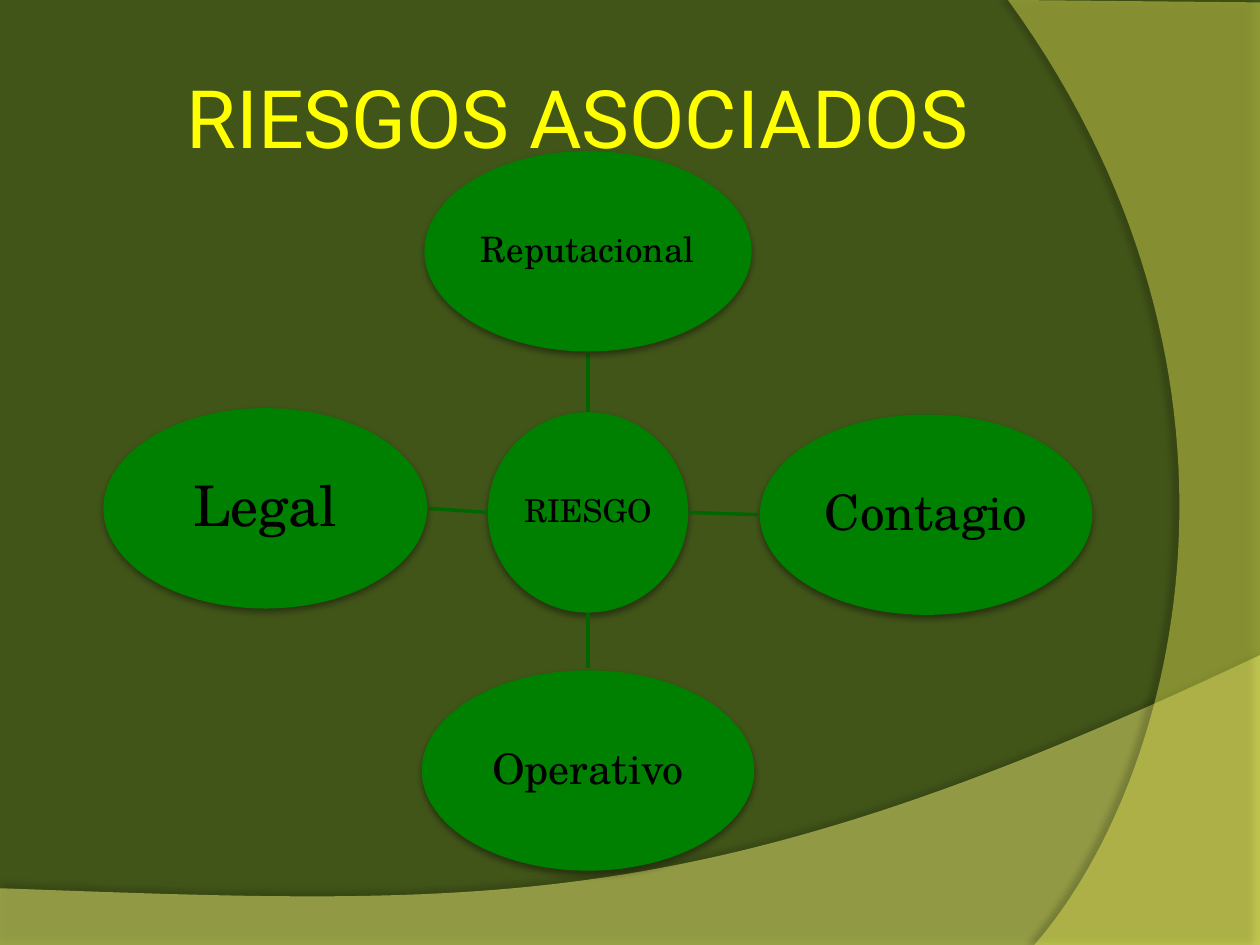
import pptx
import pptx.util
import pptx.oxml.ns
import pptx.dml.color
import pptx.enum.shapes
import pptx.enum.text
from lxml import etree

Pt = pptx.util.Pt
qn = pptx.oxml.ns.qn

TITLE = "RIESGOS ASOCIADOS"
HUB = ("RIESGO", 336, 292.8, 114.5, 18)
RISKS = [
    ("Reputacional", 336, 143.6, 187, 20),
    ("Contagio", 529.2, 294.1, 190, 28),
    ("Operativo", 336, 440.3, 190, 24),
    ("Legal", 151.6, 290.5, 185, 32),
]
HEIGHT = 114.5
GAP = 1.2
WAVES = [
    dict(before=[(0, 540.5), (720, 540.5)],
         curve=[(720, 374.4), (402.5, 524.9), (281.5, 517.7), (0, 507.6)],
         color="FFFF7F", alpha=45, shadow=(35, 4, 3.5, 270)),
    dict(before=[(720, 1.4), (720, 540)],
         curve=[(591.1, 540), (673.2, 445.7), (733, 216), (576, 0)],
         color="FFFF5E", alpha=40, shadow=(45, 4, 4, 180)),
]


def rgb(value):
    return pptx.dml.color.RGBColor.from_string(value)


def add_alpha(parent, percent):
    color = next(parent.iter(qn("a:srgbClr")))
    etree.SubElement(color, qn("a:alpha"), val=str(percent * 1000))


def set_shadow(sp, alpha, blur, dist, angle):
    sp.shadow.inherit = False
    effects = sp._element.spPr.find(qn("a:effectLst"))
    outer = etree.SubElement(effects, qn("a:outerShdw"), blurRad=str(Pt(blur)),
                             dist=str(Pt(dist)), dir=str(angle * 60000),
                             rotWithShape="0")
    etree.SubElement(outer, qn("a:srgbClr"), val="000000")
    add_alpha(outer, alpha)


def write(sp, text, size, font, color, spacing=None, wrap=False):
    tf = sp.text_frame
    tf.word_wrap = wrap
    tf.vertical_anchor = pptx.enum.text.MSO_ANCHOR.MIDDLE
    tf.margin_left = tf.margin_right = tf.margin_top = tf.margin_bottom = Pt(3.6 if wrap else 1)
    p = tf.paragraphs[0]
    p.alignment = pptx.enum.text.PP_ALIGN.CENTER
    p.line_spacing = spacing
    r = p.add_run()
    r.text = text
    r.font.size = Pt(size)
    r.font.name = font
    r.font.color.rgb = rgb(color)


def bezier(points, steps=60):
    for i in range(steps + 1):
        t = i / steps
        weights = ((1 - t) ** 3, 3 * t * (1 - t) ** 2, 3 * t * t * (1 - t), t ** 3)
        yield tuple(sum(w * pt[k] for w, pt in zip(weights, points)) for k in (0, 1))


def add_wave(slide, before, curve, color, alpha, shadow):
    outline = [(Pt(x), Pt(y)) for x, y in before + list(bezier(curve))]
    builder = slide.shapes.build_freeform(*outline[0], scale=1.0)
    builder.add_line_segments(outline[1:], close=True)
    sp = builder.convert_to_shape()
    sp.fill.solid()
    sp.fill.fore_color.rgb = rgb(color)
    add_alpha(sp._element.spPr.find(qn("a:solidFill")), alpha)
    sp.line.fill.background()
    set_shadow(sp, *shadow)


def add_ellipse(slide, text, x, y, width, size):
    sp = slide.shapes.add_shape(pptx.enum.shapes.MSO_SHAPE.OVAL, Pt(x - width / 2),
                                Pt(y - HEIGHT / 2), Pt(width), Pt(HEIGHT))
    sp.fill.solid()
    sp.fill.fore_color.rgb = rgb("008000")
    sp.line.fill.background()
    set_shadow(sp, 40, 4, 2, 90)
    write(sp, text, size, "TeX Gyre Schola", "000000", spacing=0.9)


def add_spoke(slide, x, y, width):
    _, hub_x, hub_y, hub_width, _ = HUB
    dx, dy = x - hub_x, y - hub_y
    if abs(dx) > abs(dy):
        side = 1 if dx > 0 else -1
        start = hub_x + side * hub_width / 2, hub_y
        end = x - side * (width / 2 + GAP), y
    else:
        side = 1 if dy > 0 else -1
        start = hub_x, hub_y + side * HEIGHT / 2
        end = x, y - side * (HEIGHT / 2 + GAP)
    line = slide.shapes.add_connector(pptx.enum.shapes.MSO_CONNECTOR.STRAIGHT,
                                      *(Pt(v) for v in start + end))
    line.line.color.rgb = rgb("006700")
    line.line.width = Pt(2)
    etree.SubElement(line._element.spPr, qn("a:effectLst"))


def main():
    prs = pptx.Presentation()
    prs.slide_width, prs.slide_height = Pt(720), Pt(540)
    slide = prs.slides.add_slide(prs.slide_layouts[5])
    slide.background.fill.solid()
    slide.background.fill.fore_color.rgb = rgb("425519")
    for wave in WAVES:
        add_wave(slide, **wave)
    add_ellipse(slide, *HUB)
    for risk in RISKS:
        add_spoke(slide, *risk[1:4])
        add_ellipse(slide, *risk)
    title = slide.shapes.title
    title.left, title.top, title.width, title.height = Pt(36), Pt(21.6), Pt(588), Pt(90)
    write(title, TITLE, 46, "Roboto", "FFFF00", wrap=True)
    slide.shapes._spTree.append(title._element)
    prs.save("out.pptx")


if __name__ == "__main__":
    main()
